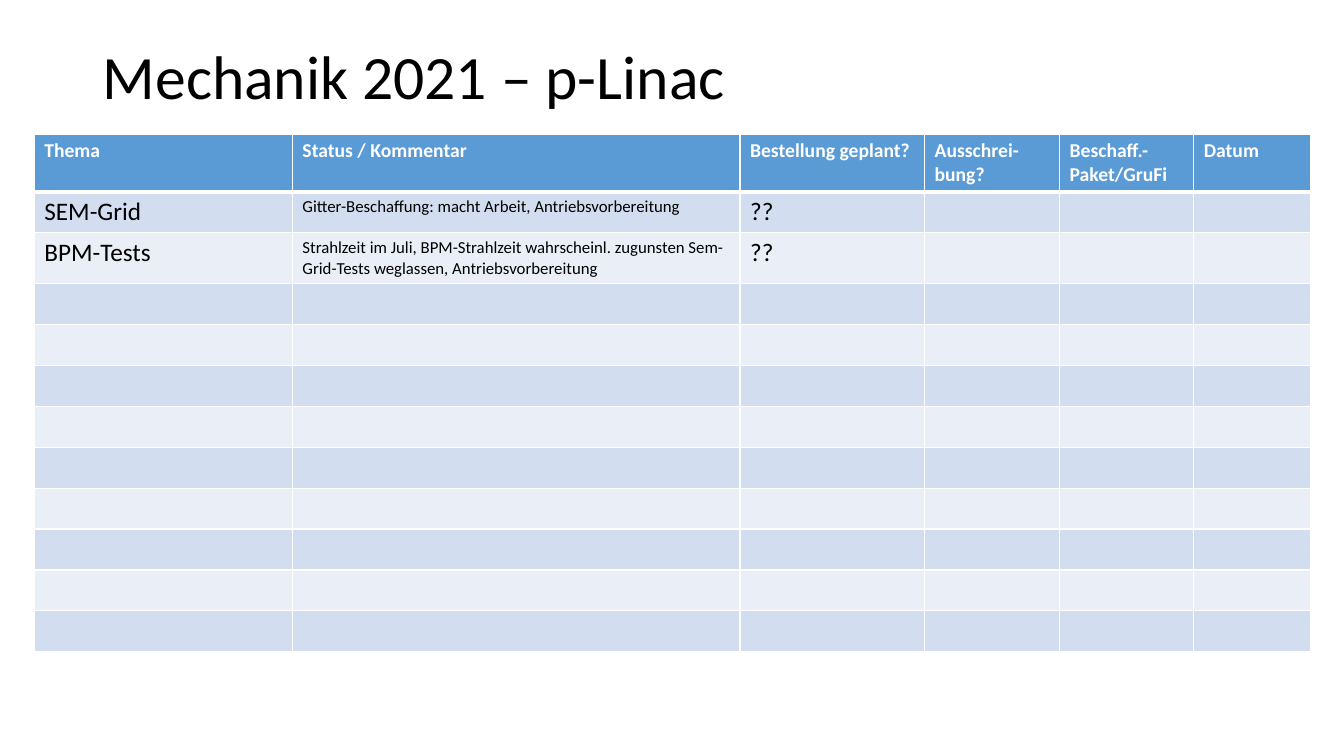
from lxml import etree
from pptx import Presentation
from pptx import util as u
from pptx.dml.color import RGBColor
from pptx.enum import text
from pptx.oxml.ns import qn

WHITE, BLACK, HEADER_BLUE = "FFFFFF", "000000", "5B9BD5"
BANDS = ("D2DEEF", "EAEFF7")
COLUMN_WIDTHS = (2.56, 4.44, 1.83, 1.34, 1.33, 1.16)
ROW_COUNT = 12
HEADINGS = ("Thema", "Status / Kommentar", "Bestellung geplant?",
            "Ausschrei-bung?", "Beschaff.-Paket/GruFi", "Datum")
TOPICS = (
    ("SEM-Grid", "Gitter-Beschaffung: macht Arbeit, Antriebsvorbereitung", "??"),
    ("BPM-Tests", "Strahlzeit im Juli, BPM-Strahlzeit wahrscheinl. zugunsten "
     "Sem-Grid-Tests weglassen, Antriebsvorbereitung", "??"),
)
TOPIC_SIZES = (18, 12, 18)


def rgb(hex_color):
    """Turn a hex string into a colour."""
    return RGBColor.from_string(hex_color)


def write(frame, words, size=18, color=BLACK, bold=False, spacing=1.0):
    """Write one left-aligned paragraph into a text frame."""
    paragraph = frame.paragraphs[0]
    paragraph.alignment = text.PP_ALIGN.LEFT
    paragraph.line_spacing = spacing
    run = paragraph.add_run()
    run.text = words
    run.font.name = "Calibri"
    run.font.size = u.Pt(size)
    run.font.bold = bold
    run.font.color.rgb = rgb(color)


def set_borders(cell, top=1, bottom=1):
    """Give a cell white borders, with widths in points."""
    properties = cell._tc.get_or_add_tcPr()
    for side, width in (("L", 1), ("R", 1), ("T", top), ("B", bottom)):
        line = etree.SubElement(properties, qn(f"a:ln{side}"), w=str(u.Pt(width)))
        fill = etree.SubElement(line, qn("a:solidFill"))
        etree.SubElement(fill, qn("a:srgbClr"), val=WHITE)


def paint(cell, color):
    """Fill a cell with one colour."""
    cell.fill.solid()
    cell.fill.fore_color.rgb = rgb(color)


def add_title(slide, words):
    """Place and write the slide title."""
    title = slide.shapes.title
    title.left, title.top = u.Inches(0.92), u.Inches(0.4)
    title.width, title.height = u.Inches(11.5), u.Inches(0.78)
    title.text_frame.vertical_anchor = text.MSO_ANCHOR.MIDDLE
    write(title.text_frame, words, size=44, spacing=0.9)


def add_schedule(slide):
    """Add the banded table of topics with its empty rows."""
    schedule = slide.shapes.add_table(
        ROW_COUNT, len(HEADINGS), u.Inches(0.34), u.Inches(1.33),
        u.Inches(sum(COLUMN_WIDTHS)), u.Inches(4.87)).table
    for column, width in zip(schedule.columns, COLUMN_WIDTHS):
        column.width = u.Inches(width)
    for number in range(ROW_COUNT):
        for cell in schedule.rows[number].cells:
            set_borders(cell, top=3 if number == 1 else 1,
                        bottom=3 if number == 0 else 1)
            paint(cell, BANDS[(number - 1) % 2] if number else HEADER_BLUE)
    for cell, heading in zip(schedule.rows[0].cells, HEADINGS):
        write(cell.text_frame, heading, size=14, color=WHITE, bold=True)
    for number, topic in enumerate(TOPICS, start=1):
        for cell, words, size in zip(schedule.rows[number].cells, topic, TOPIC_SIZES):
            write(cell.text_frame, words, size=size)


def main():
    """Build and save the slide."""
    deck = Presentation()
    deck.slide_width, deck.slide_height = u.Inches(13.33), u.Inches(7.5)
    slide = deck.slides.add_slide(deck.slide_layouts.get_by_name("Title Only"))
    add_title(slide, "Mechanik 2021 – p-Linac")
    add_schedule(slide)
    deck.save("out.pptx")


if __name__ == "__main__":
    main()
